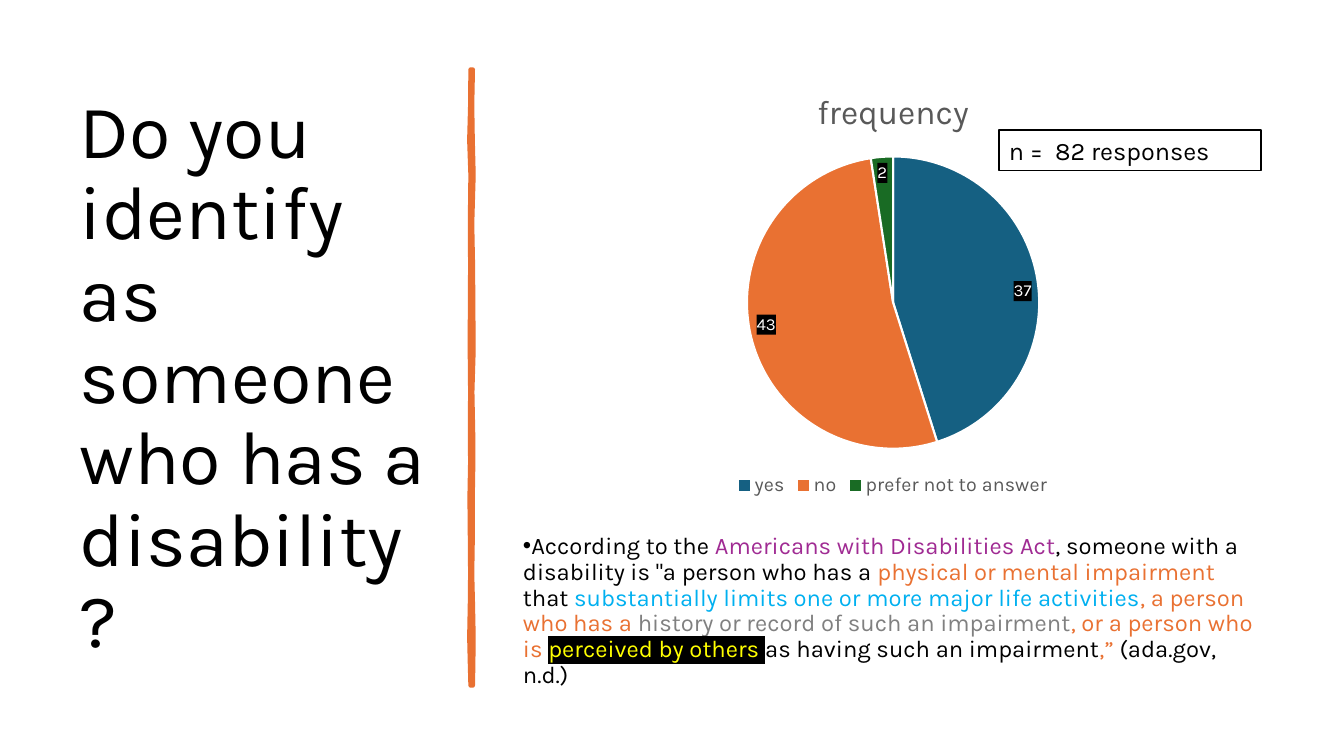
import pptx
import pptx.chart.data
import pptx.dml.color
import pptx.enum.chart
import pptx.enum.text
import pptx.oxml
import pptx.oxml.ns
import pptx.util

Pt = pptx.util.Pt
FONT = "Karla"
DRAWING_NS = pptx.oxml.ns.nsdecls("a")


def color(hex_string):
    return pptx.dml.color.RGBColor.from_string(hex_string)


def format_font(font, size, hex_string):
    font.name = FONT
    font.size = Pt(size)
    font.color.rgb = color(hex_string)


presentation = pptx.Presentation()
presentation.slide_width = Pt(960)
presentation.slide_height = Pt(540)
slide = presentation.slides.add_slide(presentation.slide_layouts[5])

# Question
title = slide.shapes.title
title.left, title.top, title.width, title.height = Pt(49.7), Pt(50.4), Pt(269.3), Pt(440)
title.text_frame.text = "Do you identify as someone who has a disability?"
title.text_frame.word_wrap = True
title.text_frame.auto_size = pptx.enum.text.MSO_AUTO_SIZE.NONE
title.text_frame.vertical_anchor = pptx.enum.text.MSO_ANCHOR.MIDDLE
paragraph = title.text_frame.paragraphs[0]
paragraph.alignment = pptx.enum.text.PP_ALIGN.LEFT
paragraph.line_spacing = 0.9
format_font(paragraph.runs[0].font, 54, "000000")

# Hand-drawn divider: (y, left edge, right edge)
divider_edges = [
    (49.7, 336.2, 337.7), (75, 336, 337.2), (100, 335.3, 337.6), (125, 336.2, 338.2),
    (160, 335.8, 337.2), (190, 336, 337.8), (220, 335.8, 338), (250, 335.7, 338.2),
    (280, 336, 337.3), (310, 335.8, 337.9), (330, 336, 338), (355, 335.5, 337.6),
    (385, 335.8, 337.6), (410, 336, 337.2), (430, 335.8, 337.7), (455, 335.3, 338.2),
    (475, 335.8, 338), (489.6, 336.2, 337.7),
]
outline = [(left, y) for y, left, right in divider_edges]
outline += [(right, y) for y, left, right in reversed(divider_edges)]
outline = [(Pt(x), Pt(y)) for x, y in outline]
builder = slide.shapes.build_freeform(*outline[0])
builder.add_line_segments(outline[1:], close=True)
divider = builder.convert_to_shape()
divider.shadow.inherit = False
divider.fill.solid()
divider.fill.fore_color.rgb = color("E97132")
divider.line.color.rgb = color("E97132")
divider.line.width = Pt(3.25)

# Definition
definition = slide.shapes.add_textbox(Pt(366.5), Pt(378), Pt(542.9), Pt(112.3))
definition.text_frame.word_wrap = True
paragraph = definition.text_frame.paragraphs[0]
paragraph.line_spacing = 0.9
paragraph.space_after = Pt(6)
properties = paragraph._p.get_or_add_pPr()
properties.set("marL", "0")
properties.set("indent", str(-Pt(18)))
properties.append(pptx.oxml.parse_xml(f'<a:buFont {DRAWING_NS} typeface="Arial"/>'))
properties.append(pptx.oxml.parse_xml(f'<a:buChar {DRAWING_NS} char="•"/>'))
definition_parts = [
    ("According to the ", "000000"),
    ("Americans with Disabilities Act", "A02B93"),
    (', someone with a disability is "a person who has a ', "000000"),
    ("physical or mental impairment ", "E97132"),
    ("that ", "000000"),
    ("substantially limits one or more major life activities", "00B0F0"),
    (", a person who has a ", "E97132"),
    ("history or record of such an impairment", "808080"),
    (", or a person who is ", "E97132"),
    ("perceived by others ", "FFFF00"),
    ("as having such an impairment", "000000"),
    (",” ", "E97132"),
    ("(ada.gov, n.d.)", "000000"),
]
for text, hex_string in definition_parts:
    run = paragraph.add_run()
    run.text = text
    format_font(run.font, 17, hex_string)
    if hex_string == "FFFF00":
        highlight = pptx.oxml.parse_xml(
            f'<a:highlight {DRAWING_NS}><a:srgbClr val="000000"/></a:highlight>')
        run._r.rPr.find(pptx.oxml.ns.qn("a:solidFill")).addnext(highlight)

# Pie chart
chart_data = pptx.chart.data.CategoryChartData()
chart_data.categories = ["yes", "no", "prefer not to answer"]
chart_data.add_series("frequency", [37, 43, 2])
chart = slide.shapes.add_chart(
    pptx.enum.chart.XL_CHART_TYPE.PIE,
    Pt(366.5), Pt(49.7), Pt(542.9), Pt(308.2), chart_data).chart
format_font(chart.font, 10, "000000")
chart.has_title = True
chart.chart_title.include_in_layout = False
chart.chart_title.text_frame.text = "frequency"
title_font = chart.chart_title.text_frame.paragraphs[0].runs[0].font
format_font(title_font, 24, "595959")
title_font.bold = False
chart.has_legend = True
chart.legend.position = pptx.enum.chart.XL_LEGEND_POSITION.BOTTOM
chart.legend.include_in_layout = False
format_font(chart.legend.font, 14, "595959")

plot = chart.plots[0]
plot.vary_by_categories = True
series = plot.series[0]
for index, hex_string in enumerate(["156082", "E97132", "196B24"]):
    slice_format = series.points[index].format
    slice_format.fill.solid()
    slice_format.fill.fore_color.rgb = color(hex_string)
    slice_format.line.color.rgb = color("FFFFFF")
    slice_format.line.width = Pt(1.5)
labels = series.data_labels
labels.show_value = True
labels.show_percentage = False
labels.show_legend_key = False
labels.position = pptx.enum.chart.XL_LABEL_POSITION.INSIDE_END
format_font(labels.font, 12, "FFFFFF")
label_background = pptx.oxml.parse_xml(
    f'<c:spPr {pptx.oxml.ns.nsdecls("c", "a")}><a:solidFill>'
    '<a:srgbClr val="000000"/></a:solidFill></c:spPr>')
labels._element.find(pptx.oxml.ns.qn("c:txPr")).addprevious(label_background)

# Sample size
sample_size = slide.shapes.add_textbox(Pt(713.5), Pt(92.9), Pt(187.2), Pt(29.1))
sample_size.line.color.rgb = color("000000")
sample_size.line.width = Pt(1)
sample_size.text_frame.word_wrap = True
sample_size.text_frame.auto_size = pptx.enum.text.MSO_AUTO_SIZE.SHAPE_TO_FIT_TEXT
sample_size.text_frame.text = "n =  82 responses"
format_font(sample_size.text_frame.paragraphs[0].runs[0].font, 18, "000000")

presentation.save("out.pptx")
